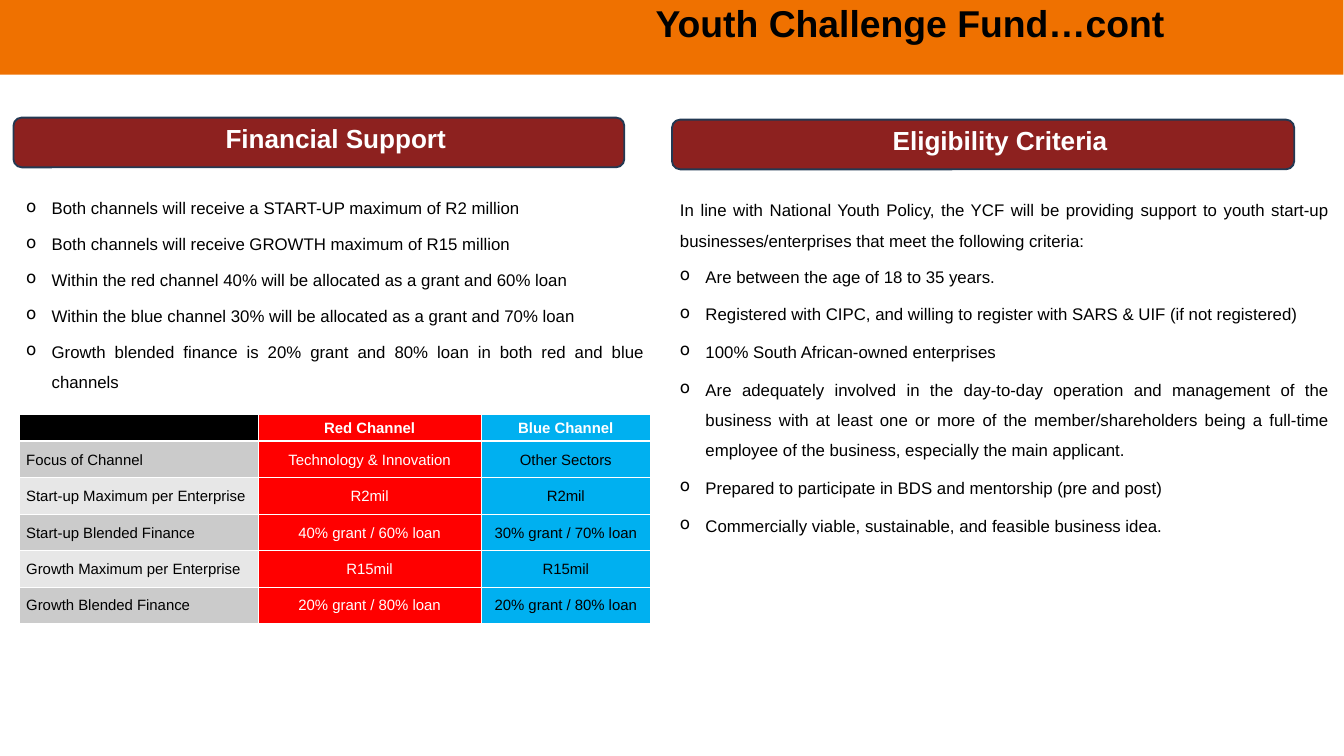
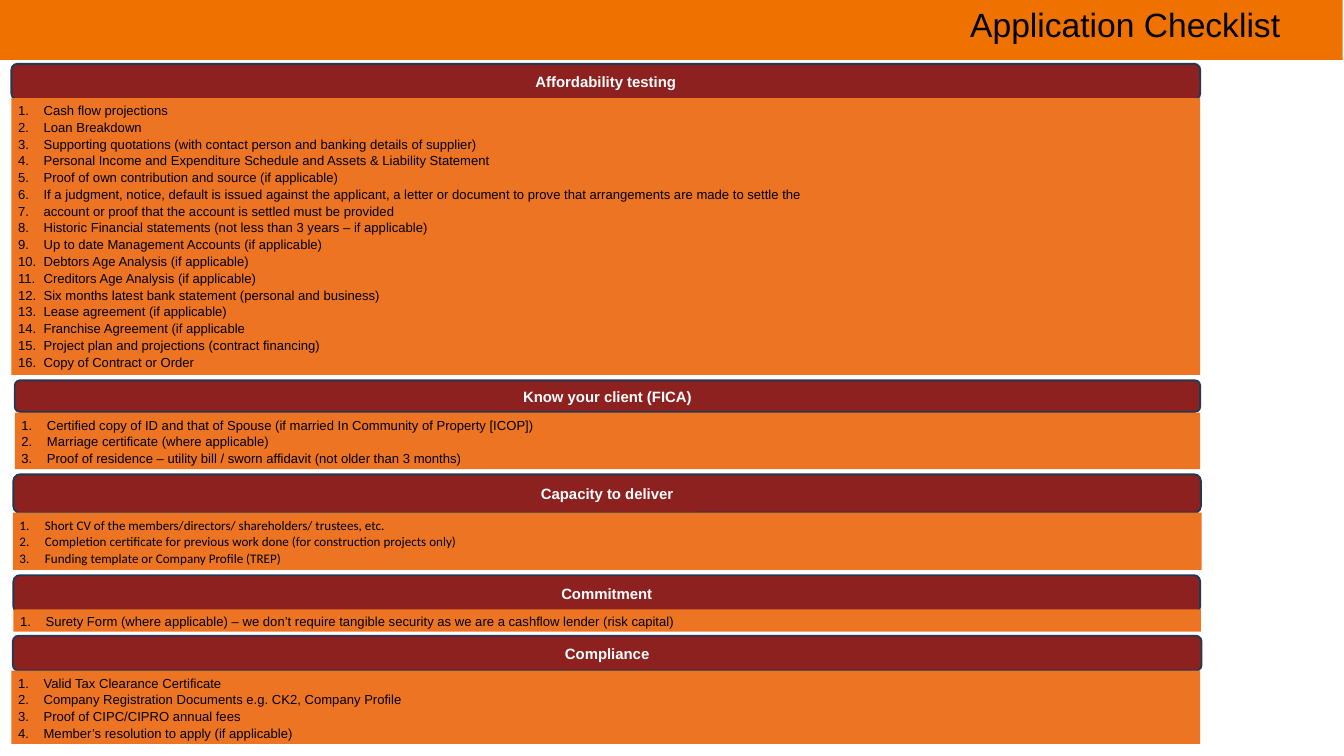
from lxml.etree import SubElement
from pptx import Presentation
from pptx.dml.color import RGBColor
from pptx.enum.shapes import MSO_SHAPE
from pptx.enum.text import MSO_ANCHOR, PP_ALIGN
from pptx.oxml.ns import qn
from pptx.util import Emu, Pt

EMU_PER_PX = 9144  # 100 px to the inch

BAND_ORANGE = "EF7100"
PANEL_ORANGE = "ED7423"
MAROON = "8D211F"
NAVY = "233953"
RED = "FF0000"
BLUE = "00B0F0"
BLACK = "000000"
WHITE = "FFFFFF"
ROW_GREYS = ("E7E7E7", "CBCBCB")

FUNDING_POINTS = [
    "Both channels will receive a START-UP maximum of R2 million",
    "Both channels will receive GROWTH maximum of R15 million",
    "Within the red channel 40% will be allocated as a grant and 60% loan",
    "Within the blue channel 30% will be allocated as a grant and 70% loan",
    "Growth blended finance is 20% grant and 80% loan in both red and blue channels",
]
CRITERIA_INTRO = (
    "In line with National Youth Policy, the YCF will be providing support to youth "
    "start-up businesses/enterprises that meet the following criteria:"
)
CRITERIA = [
    "Are between the age of 18 to 35 years.",
    "Registered with CIPC, and willing to register with SARS & UIF (if not registered)",
    "100% South African-owned enterprises",
    "Are adequately involved in the day-to-day operation and management of the business "
    "with at least one or more of the member/shareholders being a full-time employee of "
    "the business, especially the main applicant.",
    "Prepared to participate in BDS and mentorship (pre and post)",
    "Commercially viable, sustainable, and feasible business idea.",
]
CHANNEL_ROWS = [
    ("", "Red Channel", "Blue Channel"),
    ("Focus of Channel", "Technology & Innovation", "Other Sectors"),
    ("Start-up Maximum per Enterprise", "R2mil", "R2mil"),
    ("Start-up Blended Finance", "40% grant / 60% loan", "30% grant / 70% loan"),
    ("Growth Maximum per Enterprise", "R15mil", "R15mil"),
    ("Growth Blended Finance", "20% grant / 80% loan", "20% grant / 80% loan"),
]

# heading, heading box, panel box, font, items
CHECKLIST = [
    ("Affordability testing", (17, 95, 1769, 53), (17, 146, 1769, 412), "Arial", [
        "Cash flow projections",
        "Loan Breakdown",
        "Supporting quotations (with contact person and banking details of supplier)",
        "Personal Income and Expenditure Schedule and Assets & Liability Statement",
        "Proof of own contribution and source (if applicable)",
        "If a judgment, notice, default is issued against the applicant, a letter or "
        "document to prove that arrangements are made to settle the",
        "account or proof that the account is settled must be provided",
        "Historic Financial statements (not less than 3 years – if applicable)",
        "Up to date Management Accounts (if applicable)",
        "Debtors Age Analysis (if applicable)",
        "Creditors Age Analysis (if applicable)",
        "Six months latest bank statement (personal and business)",
        "Lease agreement (if applicable)",
        "Franchise Agreement (if applicable",
        "Project plan and projections (contract financing)",
        "Copy of Contract or Order",
    ]),
    ("Know your client (FICA)", (22, 566, 1764, 47), (22, 614, 1764, 84), "Arial", [
        "Certified copy of ID and that of Spouse (if married In Community of Property [ICOP])",
        "Marriage certificate (where applicable)",
        "Proof of residence – utility bill / sworn affidavit (not older than 3 months)",
    ]),
    ("Capacity to deliver", (20, 706, 1767, 57), (19, 763, 1769, 85), "Calibri", [
        "Short CV of the members/directors/ shareholders/ trustees, etc.",
        "Completion certificate for previous work done (for construction projects only)",
        "Funding template or Company Profile (TREP)",
    ]),
    ("Commitment", (20, 856, 1766, 56), (20, 907, 1767, 33), "Arial", [
        "Surety Form (where applicable) – we don’t require tangible security as we are a "
        "cashflow lender (risk capital)",
    ]),
    ("Compliance", (19, 946, 1769, 52), (17, 998, 1769, 109), "Arial", [
        "Valid Tax Clearance Certificate",
        "Company Registration Documents e.g. CK2, Company Profile",
        "Proof of CIPC/CIPRO annual fees",
        "Member’s resolution to apply (if applicable)",
    ]),
]


def px(length):
    return Emu(length * EMU_PER_PX)


def color(hex_string):
    return RGBColor.from_string(hex_string)


def set_fill(item, hex_string):
    item.fill.solid()
    item.fill.fore_color.rgb = color(hex_string)


def style(paragraph, size, fill=BLACK, bold=False, font="Arial", align=PP_ALIGN.LEFT,
          spacing=1.0, after=0):
    paragraph.alignment = align
    paragraph.line_spacing = spacing
    paragraph.space_after = Pt(after)
    paragraph.font.size = Pt(size)
    paragraph.font.name = font
    paragraph.font.bold = bold
    paragraph.font.color.rgb = color(fill)


def add_bullet(paragraph, tag, margin=38, **attributes):
    """Give the paragraph a hanging bullet: a:buChar or a:buAutoNum."""
    properties = paragraph._p.get_or_add_pPr()
    properties.set("marL", str(px(margin)))
    properties.set("indent", str(px(-38)))
    bullet_color = SubElement(properties, qn("a:buClr"))
    SubElement(bullet_color, qn("a:srgbClr"), val=BLACK)
    SubElement(properties, qn(tag), **attributes)


def add_paragraphs(frame, texts):
    """Fill an empty frame and return one paragraph for each text."""
    frame.word_wrap = True
    for index, text in enumerate(texts):
        paragraph = frame.add_paragraph() if index else frame.paragraphs[0]
        paragraph.text = text
    return frame.paragraphs


def add_box(slide, box, fill, preset=MSO_SHAPE.RECTANGLE, line=None):
    shape = slide.shapes.add_shape(preset, *map(px, box))
    shape.shadow.inherit = False
    set_fill(shape, fill)
    if line:
        shape.line.color.rgb = color(line)
        shape.line.width = Pt(2)
    else:
        shape.line.fill.background()
    return shape


def add_text_box(slide, box, texts):
    frame = slide.shapes.add_textbox(*map(px, box)).text_frame
    return frame, add_paragraphs(frame, texts)


def add_title(slide, band_box, title_box, text, size, bold, anchor):
    add_box(slide, band_box, BAND_ORANGE)
    frame, (paragraph,) = add_text_box(slide, title_box, [text])
    frame.vertical_anchor = anchor
    style(paragraph, size, bold=bold, align=PP_ALIGN.RIGHT)
    return frame


def add_heading(slide, box, text, size):
    shape = add_box(slide, box, MAROON, MSO_SHAPE.ROUNDED_RECTANGLE, NAVY)
    frame = shape.text_frame
    frame.vertical_anchor = MSO_ANCHOR.MIDDLE
    (paragraph,) = add_paragraphs(frame, [text])
    style(paragraph, size, WHITE, bold=True, align=PP_ALIGN.CENTER)
    return frame


def add_column_heading(slide, box, text):
    frame = add_heading(slide, box, text, 28)
    frame.margin_left = px(60)
    frame.margin_bottom = px(19)


def add_checklist_panel(slide, box, items, font):
    frame = add_box(slide, box, PANEL_ORANGE).text_frame
    frame.vertical_anchor = MSO_ANCHOR.TOP
    for paragraph in add_paragraphs(frame, items):
        add_bullet(paragraph, "a:buAutoNum", type="arabicPeriod")
        style(paragraph, 14, font=font, spacing=1.07)


def set_borders(cell, **widths):
    """Draw white cell borders; widths in points by side, 1 by default."""
    properties = cell._tc.get_or_add_tcPr()
    for index, side in enumerate("LRTB"):
        line = properties.makeelement(qn(f"a:ln{side}"), {"w": str(Pt(widths.get(side, 1)))})
        solid = SubElement(line, qn("a:solidFill"))
        SubElement(solid, qn("a:srgbClr"), val=WHITE)
        properties.insert(index, line)


def add_channel_table(slide):
    widths = (355, 332, 252)
    heights = (39, 55, 55, 53, 55, 53)
    frame = slide.shapes.add_table(len(heights), len(widths), px(29), px(617),
                                   px(sum(widths)), px(sum(heights)))
    table = frame.table
    for column, width in zip(table.columns, widths):
        column.width = px(width)
    for row_index, (texts, height) in enumerate(zip(CHANNEL_ROWS, heights)):
        table.rows[row_index].height = px(height)
        is_header = row_index == 0
        label_fill = BLACK if is_header else ROW_GREYS[row_index % 2]
        for column_index, text in enumerate(texts):
            cell = table.cell(row_index, column_index)
            cell.vertical_anchor = MSO_ANCHOR.MIDDLE
            set_fill(cell, (label_fill, RED, BLUE)[column_index])
            set_borders(cell, T=3 if row_index == 1 else 1, B=3 if is_header else 1)
            cell.text = text
            style(cell.text_frame.paragraphs[0], 16,
                  WHITE if is_header or column_index == 1 else BLACK, bold=is_header,
                  align=PP_ALIGN.CENTER if column_index else PP_ALIGN.LEFT, spacing=1.07)


def build_fund_slide(slide):
    title = add_title(slide, (0, -18, 1999, 129), (296, 1, 1437, 67),
                      "Youth Challenge Fund…cont", 40, True, MSO_ANCHOR.TOP)
    title.margin_left = title.margin_right = title.margin_top = title.margin_bottom = 0

    add_column_heading(slide, (1000, 178, 926, 74), "Eligibility Criteria")
    _, (intro, *points) = add_text_box(slide, (952, 278, 1035, 526),
                                       [CRITERIA_INTRO, *CRITERIA])
    intro._p.get_or_add_pPr().set("marL", str(px(50)))
    style(intro, 18, align=PP_ALIGN.JUSTIFY, spacing=1.5, after=6)
    for point in points:
        add_bullet(point, "a:buChar", margin=88, char="o")
        style(point, 18, align=PP_ALIGN.JUSTIFY, spacing=1.5, after=8)

    add_column_heading(slide, (20, 175, 909, 74), "Financial Support")
    _, points = add_text_box(slide, (29, 275, 939, 311), FUNDING_POINTS)
    for point in points:
        add_bullet(point, "a:buChar", char="o")
        style(point, 18, align=PP_ALIGN.JUSTIFY, spacing=1.5, after=6)
    add_channel_table(slide)


def build_checklist_slide(slide):
    add_title(slide, (-1, -30, 1999, 119), (765, -37, 1150, 145),
              "Application Checklist", 36, False, MSO_ANCHOR.MIDDLE)
    for heading, heading_box, panel_box, font, items in CHECKLIST:
        add_heading(slide, heading_box, heading, 16)
        add_checklist_panel(slide, panel_box, items, font)


def main():
    presentation = Presentation()
    presentation.slide_width = px(2000)
    presentation.slide_height = px(1125)
    blank = presentation.slide_layouts[6]
    for build in (build_fund_slide, build_checklist_slide):
        build(presentation.slides.add_slide(blank))
    presentation.save("out.pptx")


if __name__ == "__main__":
    main()
